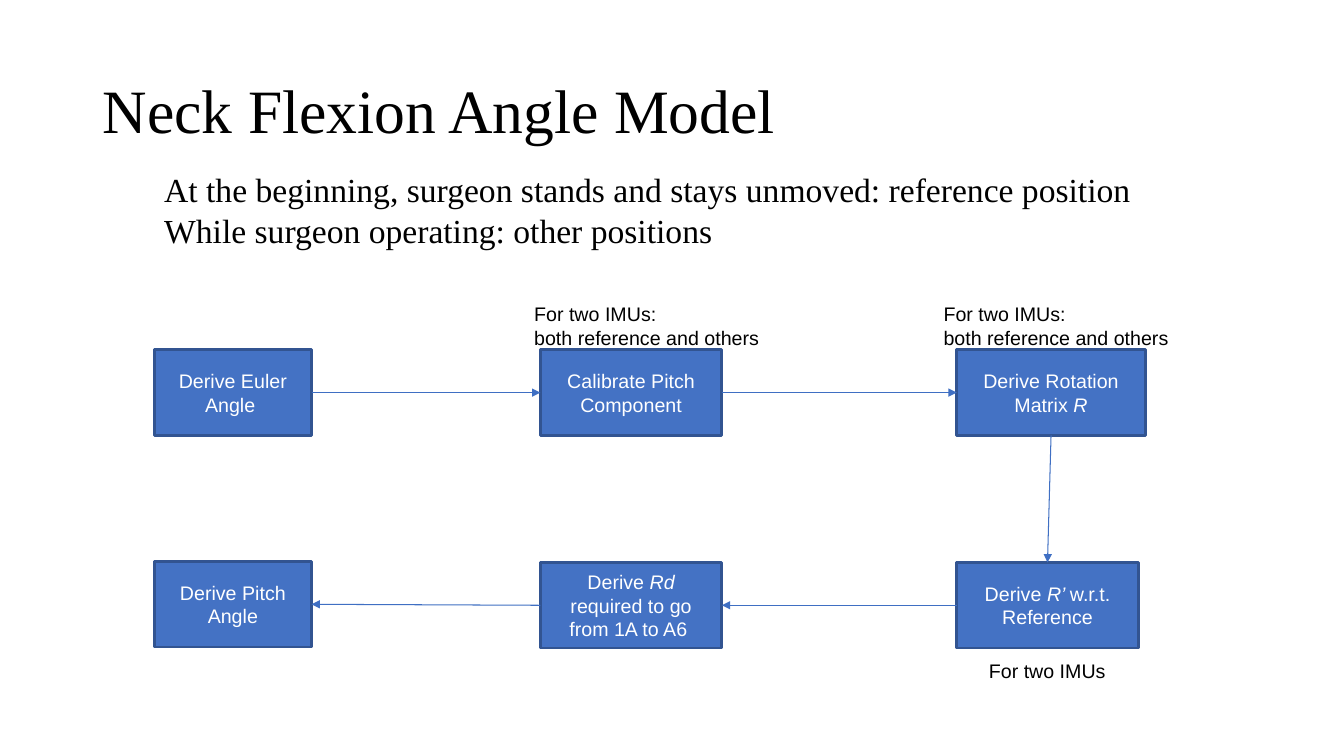
from dataclasses import dataclass
from typing import Any

import lxml.etree
import pptx
import pptx.dml.color
import pptx.enum.shapes
import pptx.enum.text
import pptx.oxml.ns
import pptx.util

ALIGN = pptx.enum.text.PP_ALIGN
ANCHOR = pptx.enum.text.MSO_ANCHOR
WIDTH, HEIGHT = pptx.util.Inches(13.33), pptx.util.Inches(7.5)


@dataclass(frozen=True)
class Theme:
    box_fill: str = "4472C4"
    box_line: str = "325491"
    arrow: str = "3F6FC3"
    ink: str = "000000"
    box_ink: str = "FFFFFF"
    serif: str = "Times New Roman"
    sans: str = "Arial"
    title_size: int = 44
    intro_size: int = 24
    label_size: int = 14
    box_line_width: float = 2
    arrow_width: float = 0.75


THEME = Theme()


@dataclass(frozen=True)
class Place:
    """A rectangle in percent of the slide's width and height."""
    left: float
    top: float
    width: float
    height: float

    def lengths(self) -> tuple[int, int, int, int]:
        return (int(WIDTH * self.left / 100), int(HEIGHT * self.top / 100),
                int(WIDTH * self.width / 100), int(HEIGHT * self.height / 100))


@dataclass(frozen=True)
class Span:
    text: str
    italic: bool = False


@dataclass(frozen=True)
class Step:
    name: str
    place: Place
    spans: tuple[Span, ...]


@dataclass(frozen=True)
class Note:
    place: Place
    lines: tuple[str, ...]
    font: str = THEME.sans
    size: int = THEME.label_size
    wrap: bool = True
    anchor: Any = ANCHOR.TOP
    spacing: float = 1.0


@dataclass(frozen=True)
class Arrow:
    start: str
    start_side: int
    end: str
    end_side: int


# Connection sites of a rectangle
TOP, LEFT, BOTTOM, RIGHT = range(4)

# Grid of the flow chart, in percent of the slide
COLUMNS = (11.48, 40.21, 71.19)
ROWS = (46.27, 74.4)
STEP_HEIGHT = 11.33
NARROW, MEDIUM, WIDE = 11.7, 13.5, 14.03

STEPS = (
    Step("euler", Place(COLUMNS[0], ROWS[0], NARROW, STEP_HEIGHT),
         (Span("Derive Euler Angle "),)),
    Step("calibrate", Place(COLUMNS[1], ROWS[0], MEDIUM, STEP_HEIGHT),
         (Span("Calibrate Pitch Component"),)),
    Step("rotation", Place(COLUMNS[2], ROWS[0], WIDE, STEP_HEIGHT),
         (Span("Derive Rotation Matrix "), Span("R", True))),
    Step("reference", Place(COLUMNS[2], ROWS[1], MEDIUM, STEP_HEIGHT),
         (Span("Derive "), Span("R’ ", True), Span("w.r.t. Reference"))),
    Step("required", Place(COLUMNS[1], ROWS[1], MEDIUM, STEP_HEIGHT),
         (Span("Derive "), Span("Rd", True), Span(" required to go from 1A to A6 "))),
    Step("pitch", Place(COLUMNS[0], ROWS[1] - 0.13, NARROW, STEP_HEIGHT),
         (Span("Derive Pitch Angle"),)),
)

ARROWS = (
    Arrow("euler", RIGHT, "calibrate", LEFT),
    Arrow("calibrate", RIGHT, "rotation", LEFT),
    Arrow("rotation", BOTTOM, "reference", TOP),
    Arrow("reference", LEFT, "required", RIGHT),
    Arrow("required", LEFT, "pitch", RIGHT),
)

BOTH_POSITIONS = ("For two IMUs:", "both reference and others")
NOTES = (
    Note(Place(6.9, 5.33, 86.27, 19.33), ("Neck Flexion Angle Model",),
         THEME.serif, THEME.title_size, anchor=ANCHOR.MIDDLE, spacing=0.9),
    Note(Place(COLUMNS[0], 21.73, 74.12, 17.47),
         ("At the beginning, surgeon stands and stays unmoved: reference position",
          "While surgeon operating: other positions"),
         THEME.serif, THEME.intro_size, wrap=False),
    *(Note(Place(left, 39.33, 19.05, 7.6), BOTH_POSITIONS) for left in (39.01, 69.47)),
    Note(Place(72.84, 86.53, 10.28, 4.53), ("For two IMUs",), wrap=False),
)


def apply(target: Any, values: dict[str, Any]) -> None:
    for name, value in values.items():
        setattr(target, name, value)


def rgb(code: str) -> pptx.dml.color.RGBColor:
    return pptx.dml.color.RGBColor.from_string(code)


def add_span(para: Any, span: Span, font: str, size: int, ink: str) -> None:
    run = para.add_run()
    run.text = span.text
    apply(run.font, {"name": font, "size": pptx.util.Pt(size), "italic": span.italic})
    run.font.color.rgb = rgb(ink)


def draw_step(page: Any, step: Step) -> Any:
    box = page.shapes.add_shape(
        pptx.enum.shapes.MSO_SHAPE.RECTANGLE, *step.place.lengths())
    box.shadow.inherit = False
    box.fill.solid()
    box.fill.fore_color.rgb = rgb(THEME.box_fill)
    box.line.color.rgb = rgb(THEME.box_line)
    box.line.width = pptx.util.Pt(THEME.box_line_width)
    apply(box.text_frame, {"word_wrap": True, "vertical_anchor": ANCHOR.MIDDLE})
    para = box.text_frame.paragraphs[0]
    para.alignment = ALIGN.CENTER
    for span in step.spans:
        add_span(para, span, THEME.sans, THEME.label_size, THEME.box_ink)
    return box


def draw_note(page: Any, note: Note) -> None:
    frame = page.shapes.add_textbox(*note.place.lengths()).text_frame
    apply(frame, {"word_wrap": note.wrap, "vertical_anchor": note.anchor})
    for index, line in enumerate(note.lines):
        para = frame.add_paragraph() if index else frame.paragraphs[0]
        apply(para, {"alignment": ALIGN.LEFT, "line_spacing": note.spacing})
        add_span(para, Span(line), note.font, note.size, THEME.ink)


def draw_arrow(page: Any, arrow: Arrow, boxes: dict[str, Any]) -> None:
    connector = page.shapes.add_connector(
        pptx.enum.shapes.MSO_CONNECTOR.STRAIGHT, 0, 0, 0, 0)
    connector.begin_connect(boxes[arrow.start], arrow.start_side)
    connector.end_connect(boxes[arrow.end], arrow.end_side)
    connector.line.color.rgb = rgb(THEME.arrow)
    connector.line.width = pptx.util.Pt(THEME.arrow_width)
    qn = pptx.oxml.ns.qn
    properties = connector._element.spPr
    lxml.etree.SubElement(properties.find(qn("a:ln")), qn("a:tailEnd"), type="triangle")
    lxml.etree.SubElement(properties, qn("a:effectLst"))


def main() -> None:
    deck = pptx.Presentation()
    apply(deck, {"slide_width": WIDTH, "slide_height": HEIGHT})
    page = deck.slides.add_slide(deck.slide_layouts[6])
    boxes = {step.name: draw_step(page, step) for step in STEPS}
    for arrow in ARROWS:
        draw_arrow(page, arrow, boxes)
    for note in NOTES:
        draw_note(page, note)
    deck.save("out.pptx")


if __name__ == "__main__":
    main()
